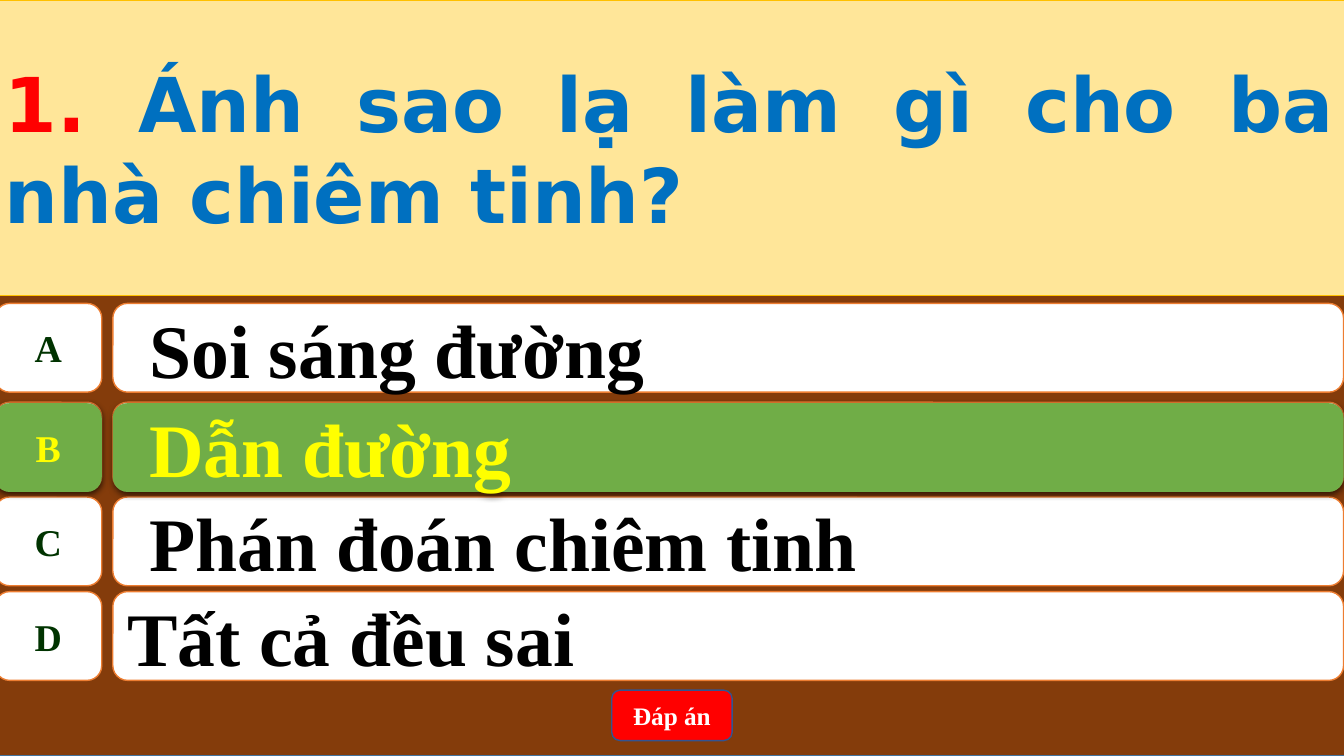
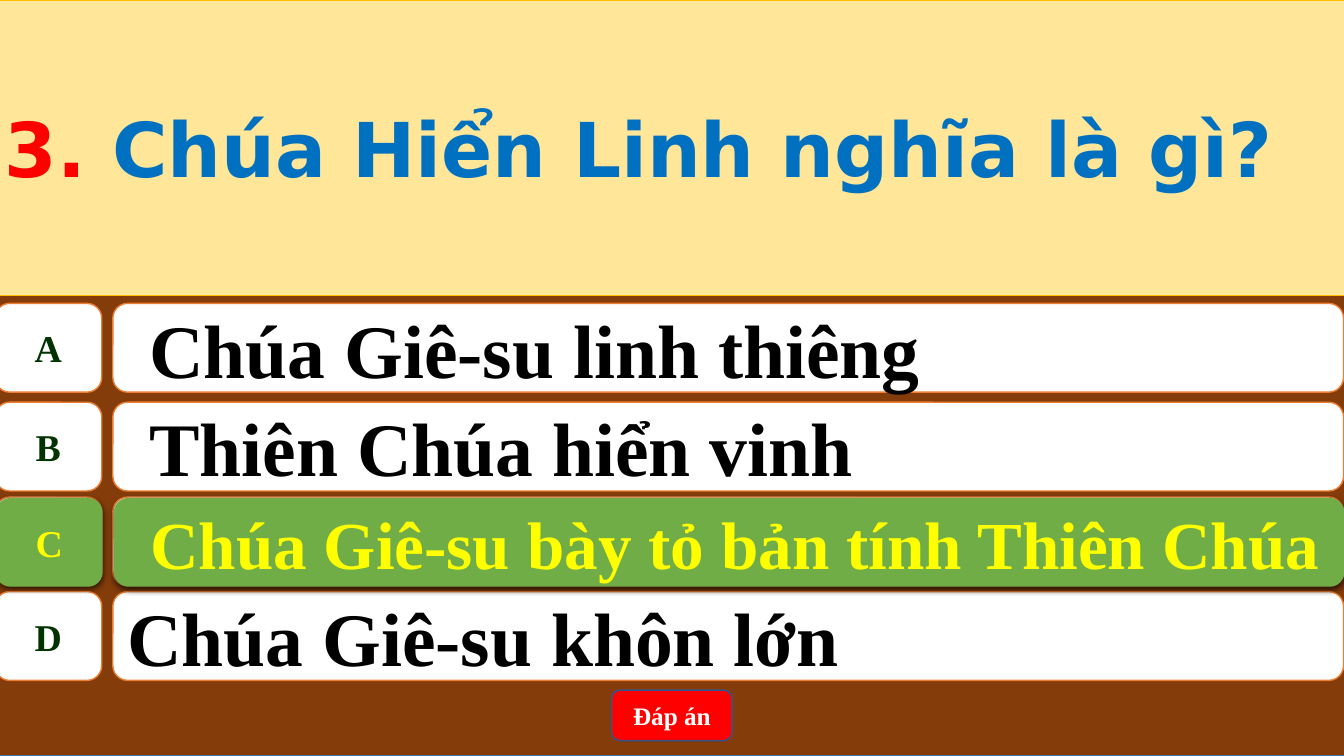
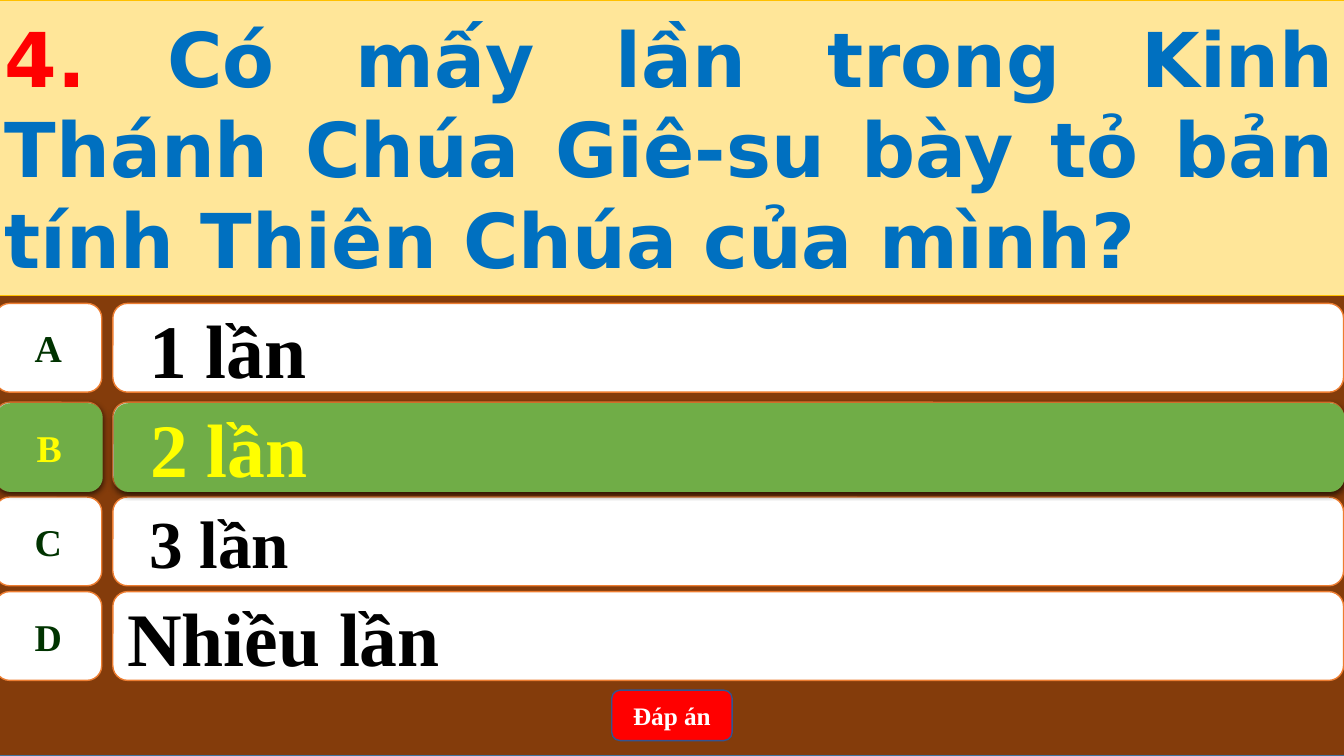
from dataclasses import dataclass

from lxml import etree
from pptx import Presentation
from pptx.dml.color import RGBColor
from pptx.enum.shapes import MSO_SHAPE
from pptx.enum.text import MSO_ANCHOR, PP_ALIGN
from pptx.oxml.ns import qn
from pptx.shapes.autoshape import Shape
from pptx.slide import Slide
from pptx.text.text import _Run
from pptx.util import Pt

RECTANGLE = MSO_SHAPE.RECTANGLE
ROUNDED = MSO_SHAPE.ROUNDED_RECTANGLE
LABEL_SHAPE = MSO_SHAPE.FLOWCHART_ALTERNATE_PROCESS
MIDDLE = MSO_ANCHOR.MIDDLE
LEFT = PP_ALIGN.LEFT
CENTER = PP_ALIGN.CENTER
JUSTIFY = PP_ALIGN.JUSTIFY

BROWN = RGBColor(0x84, 0x3C, 0x0B)
STEEL = RGBColor(0x43, 0x73, 0x9E)
CREAM = RGBColor(0xFF, 0xE6, 0x99)
GOLD = RGBColor(0xFF, 0xC0, 0x00)
WHITE = RGBColor(0xFF, 0xFF, 0xFF)
BLACK = RGBColor(0x00, 0x00, 0x00)
ORANGE = RGBColor(0xED, 0x7D, 0x31)
DARK_GREEN = RGBColor(0x00, 0x33, 0x00)
GREEN = RGBColor(0x70, 0xAD, 0x47)
YELLOW = RGBColor(0xFF, 0xFF, 0x00)
RED = RGBColor(0xFF, 0x00, 0x00)
BLUE = RGBColor(0x00, 0x70, 0xC0)
NAVY = RGBColor(0x32, 0x54, 0x91)

SERIF = "Times New Roman"
SANS = "DejaVu Sans"

LETTERS = "ABCD"
ROW_TOPS = (216.7, 287.3, 355, 422.6)
ROW_HEIGHT = 63.4
EDGE = -3.6
FULL_WIDTH = 964
LABEL_WIDTH = 76.3
ANSWER_LEFT = 80.6
ANSWER_WIDTH = 879.1
HIGHLIGHT_SHIFT = 0.7


@dataclass(frozen=True)
class Box:
    left: float
    top: float
    width: float
    height: float


@dataclass(frozen=True)
class RowStyle:
    fill: RGBColor
    label_color: RGBColor
    answer_color: RGBColor
    line: RGBColor | None = None
    shadow: bool = False


@dataclass(frozen=True)
class Answer:
    text: str
    size: float = 54
    indented: bool = True


@dataclass(frozen=True)
class Question:
    number: str
    text: str
    answers: tuple[Answer, ...]
    correct: str
    highlight_shift: float = HIGHLIGHT_SHIFT


PLAIN = RowStyle(WHITE, DARK_GREEN, BLACK, line=ORANGE)
HIGHLIGHT = RowStyle(GREEN, YELLOW, YELLOW, shadow=True)

QUESTIONS = (
    Question(
        "1. ",
        "Ánh sao lạ làm gì cho ba nhà chiêm tinh?",
        (
            Answer("Soi sáng đường"),
            Answer("Dẫn đường"),
            Answer("Phán đoán chiêm tinh"),
            Answer("Tất cả đều sai", indented=False),
        ),
        "B",
        highlight_shift=0,
    ),
    Question(
        "3. ",
        "Chúa Hiển Linh nghĩa là gì?",
        (
            Answer("Chúa Giê-su linh thiêng"),
            Answer("Thiên Chúa hiển vinh"),
            Answer("Chúa Giê-su bày tỏ bản tính Thiên Chúa", 48),
            Answer("Chúa Giê-su khôn lớn", indented=False),
        ),
        "C",
    ),
    Question(
        "4. ",
        "Có mấy lần trong Kinh Thánh Chúa Giê-su bày tỏ bản tính Thiên Chúa của mình?",
        (
            Answer("1 lần"),
            Answer("2 lần"),
            Answer("3 lần", 48),
            Answer("Nhiều lần", indented=False),
        ),
        "B",
    ),
)


def add_box(shapes, kind: MSO_SHAPE, box: Box, fill: RGBColor,
            line: RGBColor | None = None, line_width: float = 1) -> Shape:
    shape = shapes.add_shape(
        kind, Pt(box.left), Pt(box.top), Pt(box.width), Pt(box.height)
    )
    shape.shadow.inherit = False
    shape.fill.solid()
    shape.fill.fore_color.rgb = fill
    if line is None:
        shape.line.fill.background()
    else:
        shape.line.color.rgb = line
        shape.line.width = Pt(line_width)
    return shape


def format_run(run: _Run, font: str, size: float, color: RGBColor) -> None:
    run.font.name = font
    run.font.size = Pt(size)
    run.font.bold = True
    run.font.color.rgb = color


def write_text(shape: Shape, text: str, font: str, size: float, color: RGBColor,
               alignment: PP_ALIGN, wrap: bool = True) -> None:
    text_frame = shape.text_frame
    text_frame.text = text
    text_frame.word_wrap = wrap
    text_frame.vertical_anchor = MIDDLE
    paragraph = text_frame.paragraphs[0]
    paragraph.alignment = alignment
    format_run(paragraph.runs[0], font, size, color)


def indent_text(shape: Shape) -> None:
    paragraph = shape.text_frame.paragraphs[0]
    paragraph.level = 1
    properties = paragraph._p.get_or_add_pPr()
    properties.set("marL", str(Pt(36)))
    properties.set("indent", str(Pt(-20.16)))


def add_shadow(shape: Shape) -> None:
    effects = shape.element.spPr.find(qn("a:effectLst"))
    shadow = etree.SubElement(
        effects, qn("a:outerShdw"), blurRad=str(Pt(4.5)), dist=str(Pt(1.5)),
        dir="5400000", algn="ctr", rotWithShape="0",
    )
    color = etree.SubElement(shadow, qn("a:srgbClr"), val=str(BLACK))
    etree.SubElement(color, qn("a:alpha"), val="63000")


def add_answer_row(slide: Slide, index: int, answer: Answer, style: RowStyle,
                   shift_x: float = 0, shift_y: float = 0) -> None:
    shapes = slide.shapes.add_group_shape().shapes
    top = ROW_TOPS[index] + shift_y
    label_box = Box(EDGE + shift_x, top, LABEL_WIDTH, ROW_HEIGHT)
    answer_box = Box(ANSWER_LEFT + shift_x, top, ANSWER_WIDTH, ROW_HEIGHT)
    label = add_box(shapes, LABEL_SHAPE, label_box, style.fill, style.line)
    write_text(label, LETTERS[index], SERIF, 27, style.label_color, CENTER, wrap=False)
    panel = add_box(shapes, ROUNDED, answer_box, style.fill, style.line)
    write_text(panel, answer.text, SERIF, answer.size, style.answer_color, LEFT)
    if answer.indented:
        indent_text(panel)
    if style.shadow:
        add_shadow(label)
        add_shadow(panel)


def add_question_banner(slide: Slide, question: Question) -> None:
    box = Box(EDGE, 0, FULL_WIDTH, 211)
    banner = add_box(slide.shapes, RECTANGLE, box, CREAM, GOLD, 0.5)
    write_text(banner, question.number, SANS, 54, RED, JUSTIFY)
    run = banner.text_frame.paragraphs[0].add_run()
    run.text = question.text
    format_run(run, SANS, 54, BLUE)


def add_question_slide(presentation: Presentation, question: Question) -> None:
    slide = presentation.slides.add_slide(presentation.slide_layouts[6])
    add_box(slide.shapes, RECTANGLE, Box(EDGE, 0, FULL_WIDTH, 540), BROWN, STEEL)
    for index, answer in enumerate(question.answers):
        add_answer_row(slide, index, answer, PLAIN)
    button = add_box(slide.shapes, ROUNDED, Box(437, 493, 86, 36), RED, NAVY)
    write_text(button, "Đáp án", SERIF, 18, WHITE, CENTER)
    add_question_banner(slide, question)
    correct = LETTERS.index(question.correct)
    add_answer_row(slide, correct, question.answers[correct], HIGHLIGHT,
                   question.highlight_shift, HIGHLIGHT_SHIFT)


def main() -> None:
    presentation = Presentation()
    presentation.slide_width = Pt(960)
    presentation.slide_height = Pt(540)
    for question in QUESTIONS:
        add_question_slide(presentation, question)
    presentation.save("out.pptx")


if __name__ == "__main__":
    main()
